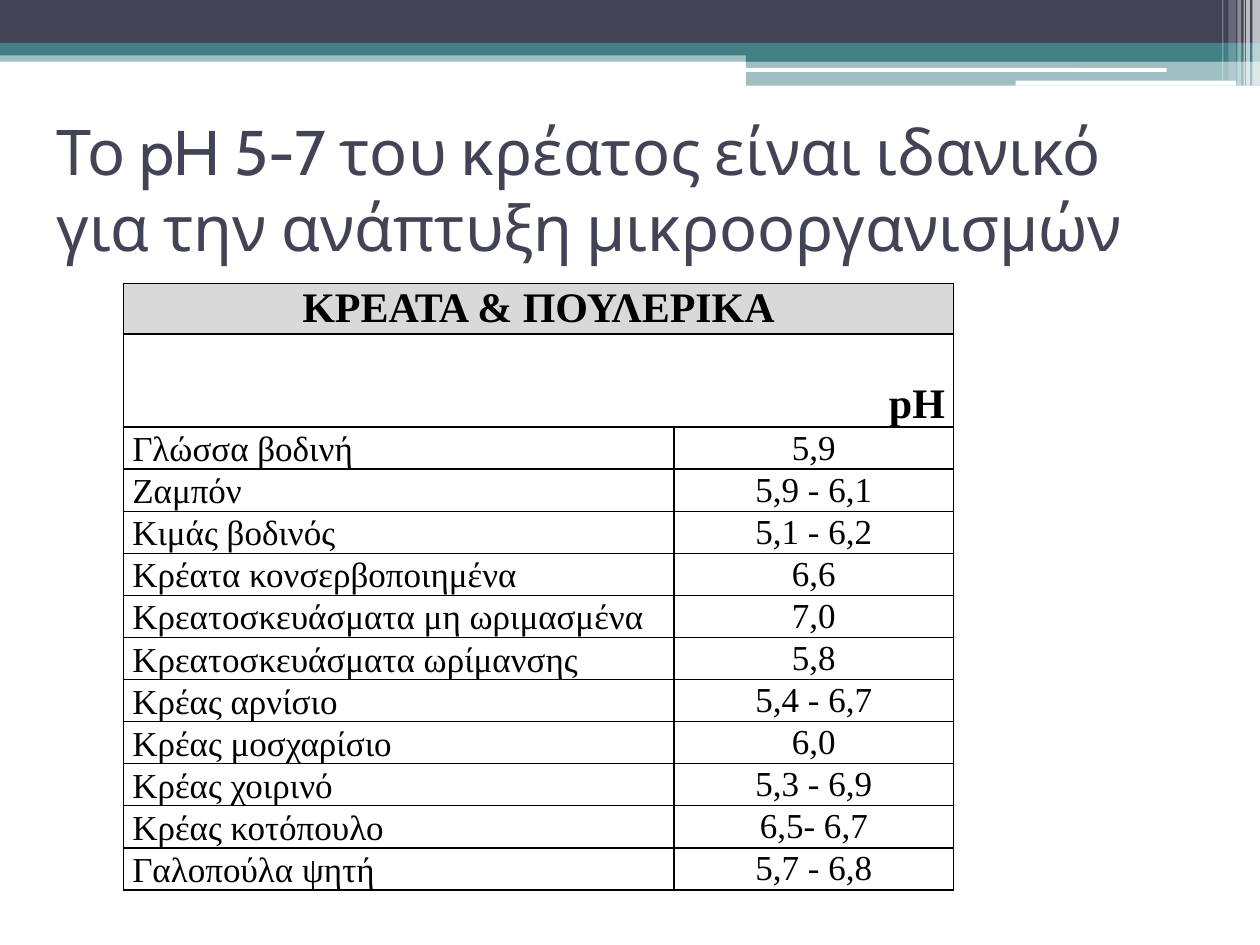
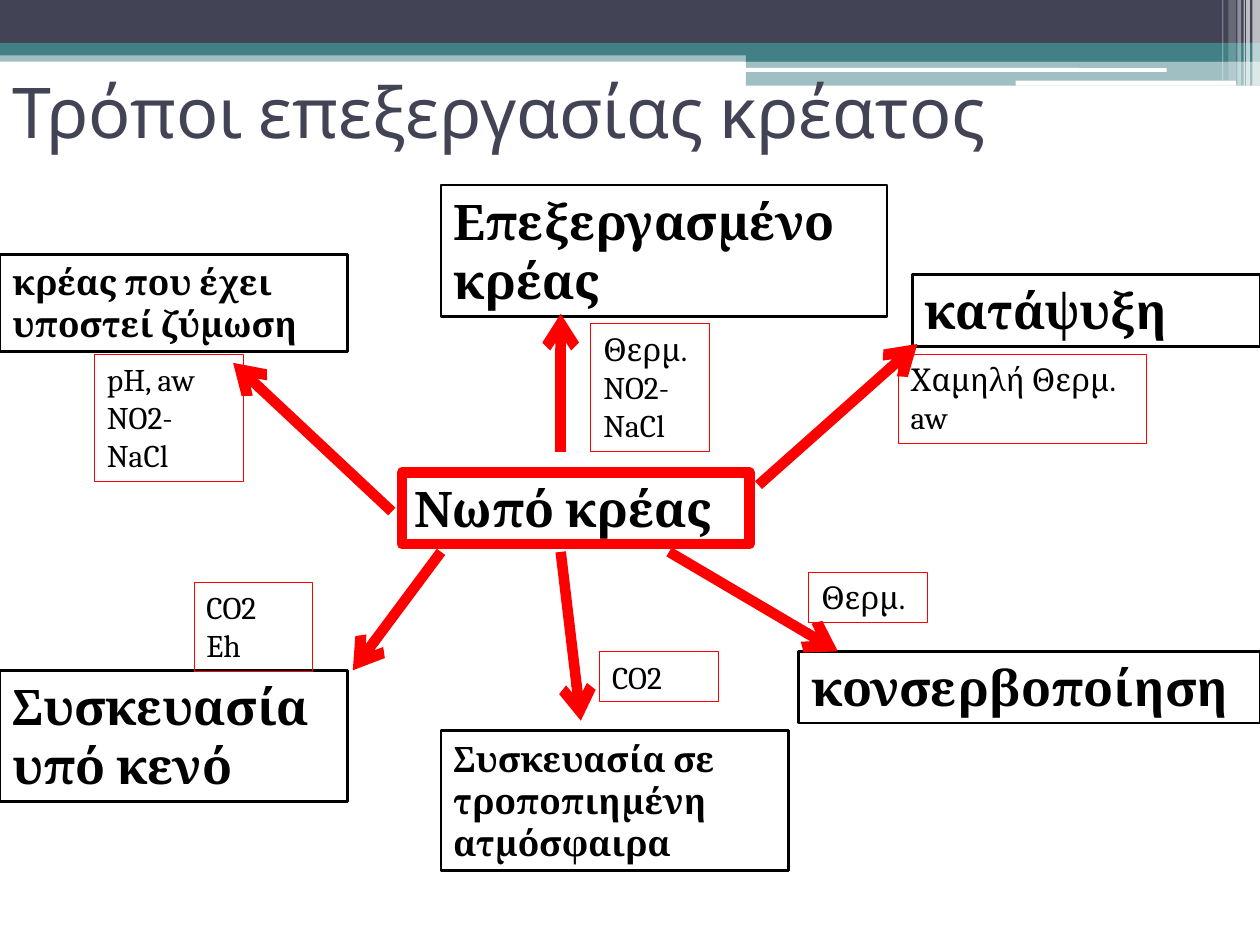
from pptx import Presentation
from pptx.dml.color import RGBColor
from pptx.enum.shapes import MSO_CONNECTOR as Connector, MSO_SHAPE as Shape
from pptx.enum.text import MSO_ANCHOR as Anchor, MSO_AUTO_SIZE as AutoSize, PP_ALIGN as Align
from pptx.oxml.ns import qn
from pptx.util import Inches, Pt
from lxml.etree import SubElement

COLOURS = {"navy": "424456", "teal": "438086", "white": "FFFFFF",
           "black": "000000", "red": "FF0000", "grey": "D9D9D9"}
TITLE = {"name": "Cabin", "size": 36, "color": "navy"}
BIG = {"name": "Cambria", "size": 28, "bold": True}
MEDIUM = {**BIG, "size": 20}
NOTE = {"name": "Cambria", "size": 18}
HEADING = {"name": "Times New Roman", "size": 24, "bold": True}
ENTRY = {"name": "Times New Roman", "size": 20}
COLUMNS, ROWS = 100, 75

# left, top, width, height, colour, opacity in percent
BANDS = [
    (0, 4, 100, 0.9, "teal", 50),
    (0, 0, 100, 3.4, "navy", 100),
    (0, 3.4, 100, 1, "teal", 100),
    (59.2, 3.9, 40.8, 1, "teal", 100),
    (59.2, 4.8, 40.8, 2, "teal", 50),
]
ROUNDED_BARS = [(59.1, 5.4, 33.5, 0.3), (80.6, 6.4, 17.5, 0.4)]
# left, width, height, opacity in percent
STRIPES = [(99.4, 0.6, 6.8, 65), (98.9, 0.3, 6.8, 65), (98.7, 0.1, 6.8, 60),
           (98.2, 0.3, 6.8, 40), (97.5, 0.6, 6.4, 20), (97, 0.1, 6.4, 30)]

MEATS = [
    ("Γλώσσα βοδινή", "5,9"),
    ("Ζαμπόν", "5,9 - 6,1"),
    ("Κιμάς βοδινός", "5,1 - 6,2"),
    ("Κρέατα κονσερβοποιημένα", "6,6"),
    ("Κρεατοσκευάσματα μη ωριμασμένα", "7,0"),
    ("Κρεατοσκευάσματα ωρίμανσης", "5,8"),
    ("Κρέας αρνίσιο", "5,4 - 6,7"),
    ("Κρέας μοσχαρίσιο", "6,0"),
    ("Κρέας χοιρινό", "5,3 - 6,9"),
    ("Κρέας κοτόπουλο", "6,5- 6,7"),
    ("Γαλοπούλα ψητή", "5,7 - 6,8"),
]
PRODUCTS = [
    ((72.4, 21.8, 27.6, 5.7), "κατάψυξη", BIG),
    ((0, 20.2, 27.6, 7.7), "κρέας που έχει υποστεί ζύμωση", MEDIUM),
    ((35, 14.7, 35.4, 10.4), "Επεξεργασμένο κρέας", BIG),
    ((63.4, 51.7, 36.6, 5.7), "κονσερβοποίηση", BIG),
    ((35, 58, 27.6, 11.1), "Συσκευασία σε τροποπιημένη ατμόσφαιρα", MEDIUM),
    ((0, 53.2, 27.6, 10.4), "Συσκευασία υπό κενό", BIG),
]
ARROWS = [
    ((44.5, 35.9), (44.5, 24.9)),
    ((53.1, 43.8), (66.5, 51.7)),
    ((60.2, 38.5), (72.8, 27.3)),
    ((44.5, 43.8), (46.1, 57.2)),
    ((31.1, 40.6), (18.5, 28.8)),
    ((35, 43.8), (28, 53.2)),
]
CONDITIONS = [
    ((46.9, 25.7, 9.4, 10.1), ["Θερμ.", "NO2-", "NaCl"]),
    ((71.3, 28.1, 19.7, 7.1), ["Χαμηλή Θερμ.", "aw"]),
    ((64.2, 45.4, 9.4, 4), ["Θερμ."]),
    ((47.6, 51.7, 9.4, 4), ["CO2"]),
    ((15.4, 46.2, 9.4, 7.1), ["CO2", "Eh"]),
    ((7.5, 28.1, 11.8, 10.1), ["pH, aw", "NO2-", "NaCl"]),
]


def rgb(name):
    return RGBColor.from_string(COLOURS[name])


class SlideBuilder:
    """Draws on the current page; places are in columns and rows of the grid."""

    def __init__(self):
        self.deck = Presentation()
        self.deck.slide_width, self.deck.slide_height = Inches(10), Inches(7.5)
        self.page = None

    def x(self, columns):
        return round(self.deck.slide_width * columns / COLUMNS)

    def y(self, rows):
        return round(self.deck.slide_height * rows / ROWS)

    def area(self, left, top, width, height):
        return self.x(left), self.y(top), self.x(width), self.y(height)

    def new_page(self):
        self.page = self.deck.slides.add_slide(self.deck.slide_layouts[6])
        for *place, colour, opacity in BANDS:
            self.block(place, colour, opacity)
        for place in ROUNDED_BARS:
            self.block(place, "white", kind=Shape.ROUNDED_RECTANGLE)
        for left, width, height, opacity in STRIPES:
            self.block((left, 0, width, height), "white", opacity)

    def block(self, place, colour, opacity=100, kind=Shape.RECTANGLE):
        box = self.page.shapes.add_shape(kind, *self.area(*place))
        box.shadow.inherit = False
        box.line.fill.background()
        box.fill.solid()
        box.fill.fore_color.rgb = rgb(colour)
        if opacity < 100:
            tint = box._element.spPr.find(".//" + qn("a:srgbClr"))
            SubElement(tint, qn("a:alpha"), val=str(opacity * 1000))

    def fill_text(self, frame, lines, style, align=Align.LEFT):
        frame.word_wrap = True
        for number, line in enumerate(lines):
            para = frame.add_paragraph() if number else frame.paragraphs[0]
            para.alignment = align
            span = para.add_run()
            span.text = line
            for key, value in {"color": "black", "bold": False, **style}.items():
                if key == "color":
                    span.font.color.rgb = rgb(value)
                else:
                    setattr(span.font, key, Pt(value) if key == "size" else value)

    def title(self, place, text, size):
        frame = self.page.shapes.add_textbox(*self.area(*place)).text_frame
        frame.vertical_anchor = Anchor.MIDDLE
        self.fill_text(frame, [text], {**TITLE, "size": size})

    def framed_text(self, place, lines, style, colour, weight):
        box = self.page.shapes.add_shape(Shape.RECTANGLE, *self.area(*place))
        box.shadow.inherit = False
        box.fill.background()
        box.line.color.rgb = rgb(colour)
        box.line.width = Pt(weight)
        box.text_frame.vertical_anchor = Anchor.TOP
        box.text_frame.auto_size = AutoSize.SHAPE_TO_FIT_TEXT
        self.fill_text(box.text_frame, lines, style)

    def arrow(self, start, end):
        connector = self.page.shapes.add_connector(
            Connector.STRAIGHT, self.x(start[0]), self.y(start[1]),
            self.x(end[0]), self.y(end[1]))
        connector.line.color.rgb = rgb("red")
        connector.line.width = Pt(6)
        properties = connector._element.spPr
        SubElement(properties.find(qn("a:ln")), qn("a:tailEnd"), type="arrow")
        SubElement(properties, qn("a:effectLst"))

    def table(self, place, widths, heights):
        grid = self.page.shapes.add_table(
            len(heights), len(widths), *self.area(*place)).table
        grid.first_row = grid.horz_banding = False
        for column, width in zip(grid.columns, widths):
            column.width = self.x(width)
        for row, height in zip(grid.rows, heights):
            row.height = self.y(height)
            for cell in row.cells:
                self.border(cell)
                cell.fill.background()
        return grid

    def border(self, cell):
        for side in ("a:lnL", "a:lnR", "a:lnT", "a:lnB"):
            edge = SubElement(cell._tc.get_or_add_tcPr(), qn(side), w=str(int(Pt(1))))
            paint = SubElement(edge, qn("a:solidFill"))
            SubElement(paint, qn("a:srgbClr"), val=COLOURS["black"])

    def cell(self, cell, text, style, align, anchor=Anchor.MIDDLE):
        layout = {"margin_left": Inches(0.07), "margin_right": Inches(0.07),
                  "margin_top": 0, "margin_bottom": 0, "vertical_anchor": anchor}
        for key, value in layout.items():
            setattr(cell, key, value)
        self.fill_text(cell.text_frame, [text], style, align)


def acidity_page(builder):
    builder.new_page()
    builder.title((3.5, 9.1, 90, 11.7),
                  "Το pH 5-7 του κρέατος είναι ιδανικό για την ανάπτυξη μικροοργανισμών", 36)
    heights = [3.7, 7.4] + [3.3] * len(MEATS)
    grid = builder.table((9.8, 22.5, 65.9, sum(heights)), (43.7, 22.2), heights)
    for row in (0, 1):
        grid.cell(row, 0).merge(grid.cell(row, 1))
    heading = grid.cell(0, 0)
    heading.fill.solid()
    heading.fill.fore_color.rgb = rgb("grey")
    builder.cell(heading, "ΚΡΕΑΤΑ & ΠΟΥΛΕΡΙΚA", HEADING, Align.CENTER)
    builder.cell(grid.cell(1, 0), "pH", HEADING, Align.RIGHT, Anchor.BOTTOM)
    for row, (meat, acidity) in enumerate(MEATS, start=2):
        builder.cell(grid.cell(row, 0), meat, ENTRY, Align.LEFT, Anchor.BOTTOM)
        builder.cell(grid.cell(row, 1), acidity, ENTRY, Align.CENTER)


def processing_page(builder):
    builder.new_page()
    builder.title((0, 2.9, 90, 11.7), "Τρόποι επεξεργασίας κρέατος", 40)
    builder.framed_text((31.9, 37.5, 27.6, 5.7), ["Νωπό κρέας"], BIG, "red", 6)
    for place, product, style in PRODUCTS:
        builder.framed_text(place, [product], style, "black", 1.5)
    for start, end in ARROWS:
        builder.arrow(start, end)
    for place, lines in CONDITIONS:
        builder.framed_text(place, lines, NOTE, "red", 0.5)


def main():
    builder = SlideBuilder()
    acidity_page(builder)
    processing_page(builder)
    builder.deck.save("out.pptx")


if __name__ == "__main__":
    main()
